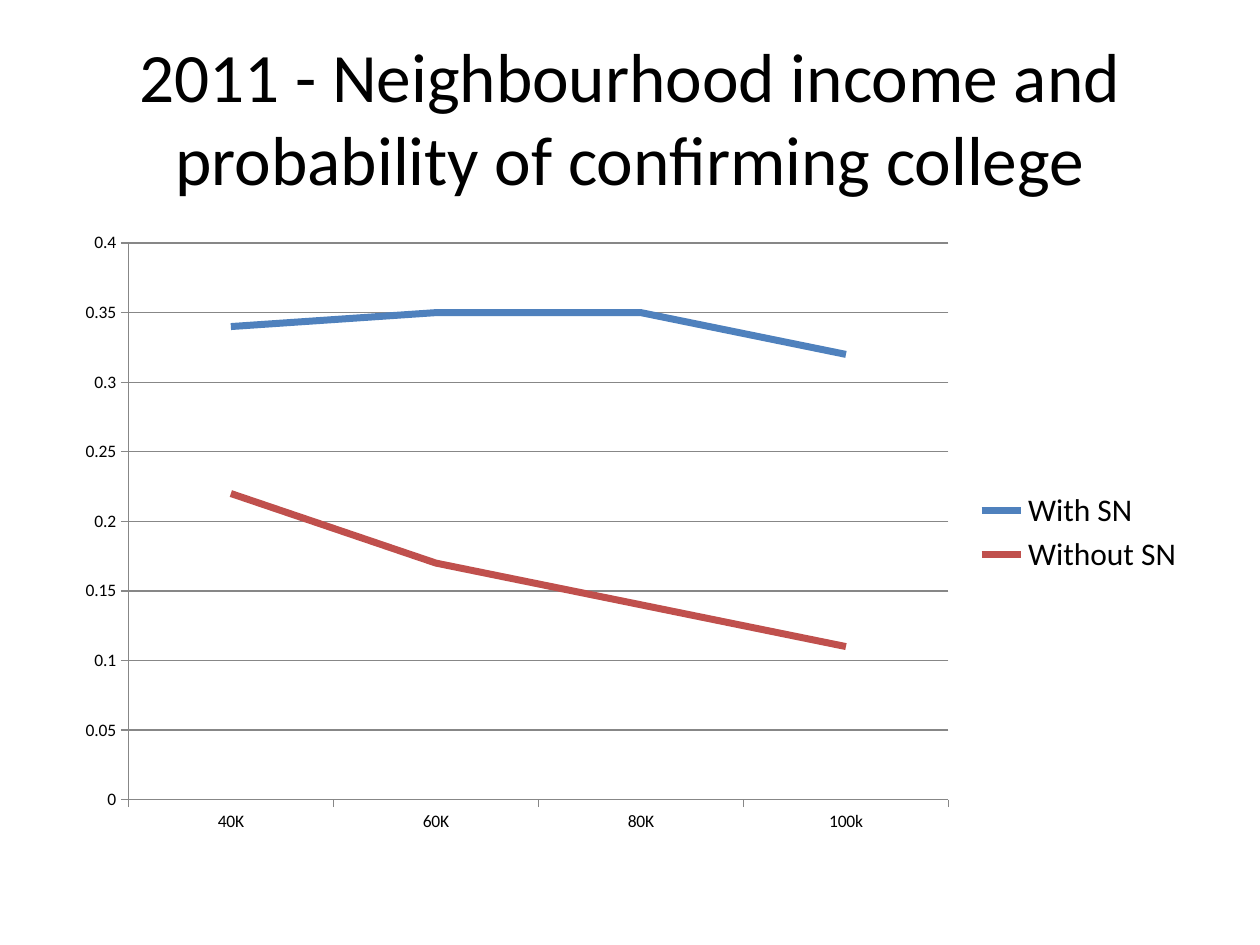
from pptx import Presentation
from pptx.chart.data import CategoryChartData
from pptx.dml.color import RGBColor
from pptx.enum.chart import (XL_CHART_TYPE as ChartType, XL_LEGEND_POSITION as LegendPos,
                             XL_MARKER_STYLE as Marker, XL_TICK_MARK as Tick)
from pptx.enum.text import MSO_ANCHOR as Anchor, PP_ALIGN as Align
from pptx.util import Cm, Pt


def colour(hex_code):
    return RGBColor.from_string(hex_code)


def write_text(frame, text, size, font, ink, align=Align.CENTER, anchor=Anchor.MIDDLE):
    frame.word_wrap = True
    frame.vertical_anchor = anchor
    paragraph = frame.paragraphs[0]
    paragraph.alignment = align
    run = paragraph.add_run()
    run.text = text
    run.font.size = Pt(size)
    run.font.name = font
    run.font.color.rgb = colour(ink)


class SlideBuilder:
    font = "Calibri"
    ink = "000000"
    grid = "878787"

    def __init__(self, slide):
        self.slide = slide

    def title(self, text, left, top, width, height):
        box = self.slide.shapes.add_textbox(Cm(left), Cm(top), Cm(width), Cm(height))
        write_text(box.text_frame, text, size=39.6, font=self.font, ink=self.ink)

    def style_font(self, font, size):
        font.size = Pt(size)
        font.name = self.font
        font.color.rgb = colour(self.ink)

    def style_line(self, line, hex_code, width):
        line.color.rgb = colour(hex_code)
        line.width = Pt(width)

    def line_chart(self, categories, series, left, top, width, height):
        data = CategoryChartData()
        data.categories = categories
        for name, values, _ in series:
            data.add_series(name, values)
        chart = self.slide.shapes.add_chart(
            ChartType.LINE, Cm(left), Cm(top), Cm(width), Cm(height), data).chart
        chart.has_title = False
        self.style_font(chart.font, 10)

        # Legend
        chart.has_legend = True
        chart.legend.position = LegendPos.RIGHT
        chart.legend.include_in_layout = False
        self.style_font(chart.legend.font, 18)

        # Axes and gridlines
        for axis in (chart.category_axis, chart.value_axis):
            axis.major_tick_mark = Tick.OUTSIDE
            axis.minor_tick_mark = Tick.NONE
            self.style_line(axis.format.line, self.grid, 0.75)
        probability = chart.value_axis
        probability.minimum_scale = 0
        probability.maximum_scale = 0.4
        probability.major_unit = 0.05
        probability.has_major_gridlines = True
        self.style_line(probability.major_gridlines.format.line, self.grid, 0.75)
        probability.tick_labels.number_format = "General"
        probability.tick_labels.number_format_is_linked = False

        # Lines
        plot = chart.plots[0]
        plot.vary_by_categories = False
        for group, (_, _, hex_code) in zip(plot.series, series):
            group.smooth = False
            group.marker.style = Marker.NONE
            self.style_line(group.format.line, hex_code, 4)


def main():
    deck = Presentation()
    deck.slide_width, deck.slide_height = Cm(25.4), Cm(19.05)
    builder = SlideBuilder(deck.slides.add_slide(deck.slide_layouts[6]))
    margin, content_width = 1.27, 22.86

    # Heading
    builder.title("2011 - Neighbourhood income and probability of confirming college",
                  margin, 0.76, content_width, 3.18)

    # Probability by neighbourhood income
    builder.line_chart(
        ["40K", "60K", "80K", "100k"],
        [("With SN", (0.34, 0.35, 0.35, 0.32), "4F81BD"),
         ("Without SN", (0.22, 0.17, 0.14, 0.11), "C0504D")],
        margin, 4.45, content_width, 12.57)

    deck.save("out.pptx")


if __name__ == "__main__":
    main()
